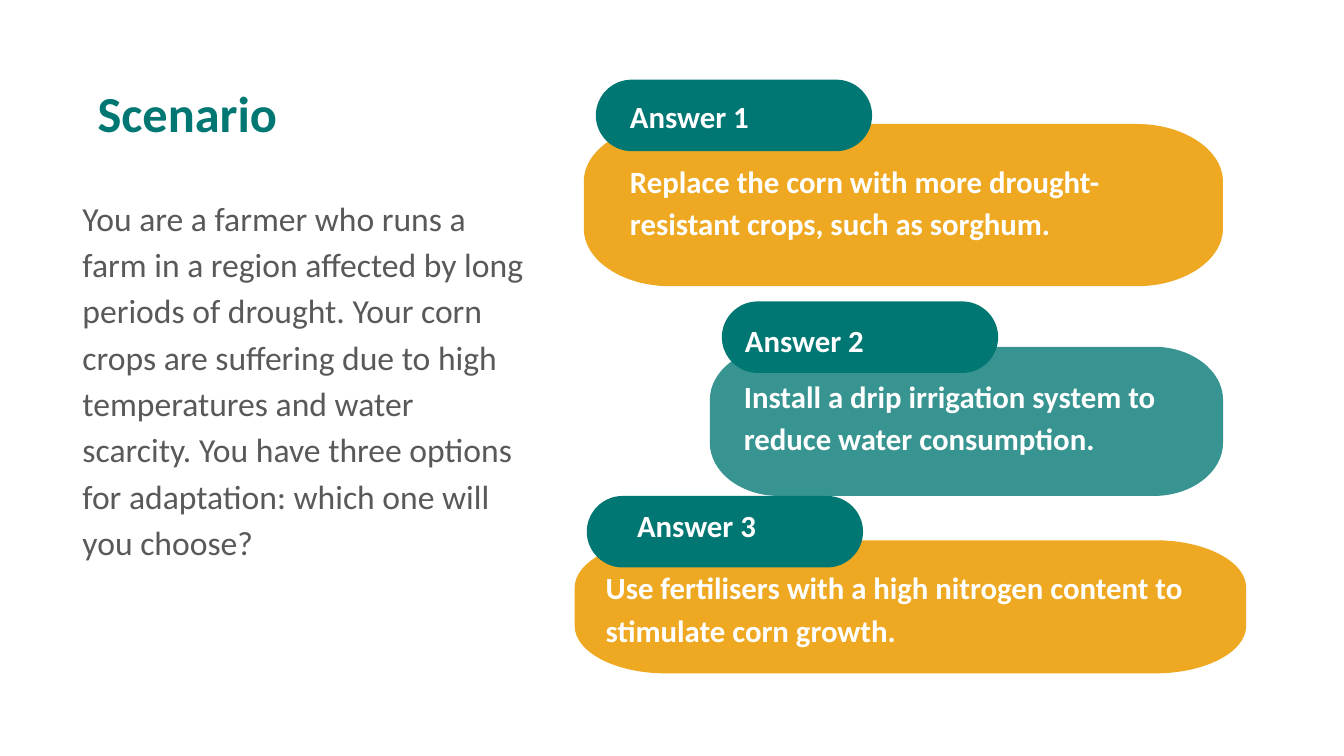
from lxml import etree
from pptx import Presentation
from pptx.dml.color import RGBColor
from pptx.enum.text import MSO_AUTO_SIZE, PP_ALIGN
from pptx.oxml.ns import qn
from pptx.util import Inches, Pt

TEAL, AMBER, WHITE, GREY = "007772", "EEA821", "FFFFFF", "595959"
CARD_CORNER = (0.135, 0.356)  # corner radii as shares of width and height
TAG_CORNER = (0.13, 0.5)
TAG_SIZE = (2.74, 0.71)


def colour(value):
    return RGBColor.from_string(value)


class ScenarioSlide:
    font_name = "Calibri"
    curve_share = 0.55  # length of a curve handle as a share of the radius

    def __init__(self, deck):
        self.page = deck.slides.add_slide(deck.slide_layouts[6])

    def panel(self, place, corner, fill, opacity=100):
        """Draw a borderless panel with elliptical corners."""
        left, top, width, height = [Inches(length) for length in place]
        right, bottom = left + width, top + height
        across, down = round(width * corner[0]), round(height * corner[1])
        points = [
            (right - across, bottom), (left + across, bottom),
            (left, bottom - down), (left, top + down),
            (left + across, top), (right - across, top),
            (right, top + down), (right, bottom - down),
        ]
        builder = self.page.shapes.build_freeform(*points[0])
        builder.add_line_segments(points[1:] + points[:1], close=True)
        shape = builder.convert_to_shape()
        local = [(x - left, y - top) for x, y in points]
        self.round_corners(shape, local)
        shape.shadow.inherit = False
        shape.fill.solid()
        shape.fill.fore_color.rgb = colour(fill)
        shape.line.fill.background()
        if opacity < 100:
            tint = shape._element.spPr.find(".//" + qn("a:srgbClr"))
            etree.SubElement(tint, qn("a:alpha"), val=str(opacity * 1000))

    def round_corners(self, shape, points):
        """Turn every second segment of the outline into a curve."""
        segments = list(shape._element.iter(qn("a:lnTo")))
        for index in range(1, len(points), 2):
            start, end = points[index], points[(index + 1) % len(points)]
            tip = (end[0], start[1]) if index % 4 == 1 else (start[0], end[1])
            handles = [
                [round(a + (b - a) * self.curve_share) for a, b in zip(origin, tip)]
                for origin in (start, end)
            ]
            curve = etree.Element(qn("a:cubicBezTo"))
            for x, y in [*handles, end]:
                etree.SubElement(curve, qn("a:pt"), x=str(x), y=str(y))
            segments[index].getparent().replace(segments[index], curve)

    def text(self, words, place, size, ink, bold=True, spacing=1.0, grow=True):
        box = self.page.shapes.add_textbox(*[Inches(length) for length in place])
        frame = box.text_frame
        frame.word_wrap = True
        frame.auto_size = MSO_AUTO_SIZE.SHAPE_TO_FIT_TEXT if grow else MSO_AUTO_SIZE.NONE
        para = frame.paragraphs[0]
        para.alignment = PP_ALIGN.LEFT
        para.line_spacing = spacing
        span = para.add_run()
        span.text = words
        style = {"name": self.font_name, "size": Pt(size), "bold": bold}
        for name, value in style.items():
            setattr(span.font, name, value)
        span.font.color.rgb = colour(ink)


# Panels from back to front: place, corner, fill, opacity
PANELS = [
    ((5.7, 5.36, 6.66, 1.32), CARD_CORNER, AMBER, 100),
    ((7.04, 3.44, 5.09, 1.48), CARD_CORNER, TEAL, 78),
    ((7.16, 2.99, *TAG_SIZE), TAG_CORNER, TEAL, 100),
    ((5.79, 1.23, 6.34, 1.61), CARD_CORNER, AMBER, 100),
    ((5.91, 0.79, *TAG_SIZE), TAG_CORNER, TEAL, 100),
    ((5.82, 4.92, *TAG_SIZE), TAG_CORNER, TEAL, 100),
]
LABEL_PLACES = [
    (6.15, 0.92, 2.74, 0.47),
    (7.29, 3.14, 2.22, 0.47),
    (6.22, 4.98, 2.12, 0.47),
]
ANSWERS = [
    ("Replace the corn with more drought-resistant crops, such as sorghum.",
     (6.15, 1.51, 5.76, 1.56)),
    ("Install a drip irrigation system to reduce water consumption.",
     (7.28, 3.64, 4.6, 1.56)),
    ("Use fertilisers with a high nitrogen content to stimulate corn growth.",
     (5.91, 5.54, 6.24, 1.56)),
]
SCENARIO = (
    "You are a farmer who runs a farm in a region affected by long periods of "
    "drought. Your corn crops are suffering due to high temperatures and water "
    "scarcity. You have three options for adaptation: which one will you choose?"
)


def main():
    deck = Presentation()
    deck.slide_width, deck.slide_height = Inches(13.33), Inches(7.5)
    slide = ScenarioSlide(deck)

    # Answer cards and tags
    for panel in PANELS:
        slide.panel(*panel)

    # Answer labels and wording
    for number, place in enumerate(LABEL_PLACES, 1):
        slide.text(f"Answer {number}", place, 22, WHITE)
    for words, place in ANSWERS:
        slide.text(words, place, 22, WHITE, spacing=1.15)

    # Scenario column
    slide.text(SCENARIO, (0.72, 1.85, 4.6, 4.21), 24, GREY,
               bold=False, spacing=1.15, grow=False)
    slide.text("Scenario", (0.87, 0.83, 4.6, 0.88), 36, TEAL, spacing=0.9, grow=False)

    deck.save("out.pptx")


if __name__ == "__main__":
    main()
